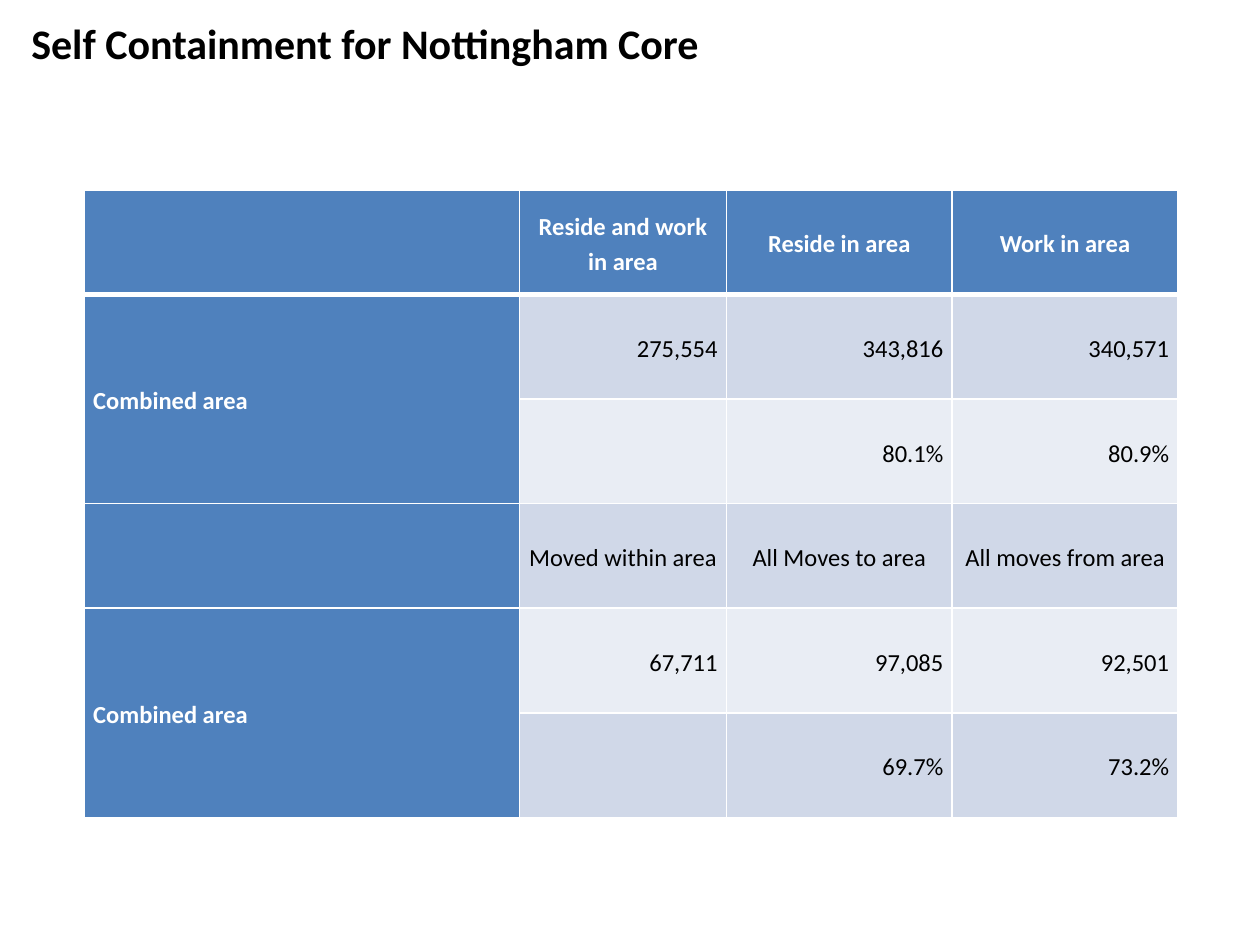
from dataclasses import dataclass

from lxml import etree
from pptx import Presentation
from pptx.dml.color import RGBColor
from pptx.enum.text import MSO_ANCHOR, PP_ALIGN
from pptx.oxml.ns import qn
from pptx.util import Inches, Pt

LEFT, CENTER, RIGHT = PP_ALIGN.LEFT, PP_ALIGN.CENTER, PP_ALIGN.RIGHT
MIDDLE = MSO_ANCHOR.MIDDLE
BLANK_LAYOUT = 6
POINT = Pt(1)


@dataclass(frozen=True)
class Theme:
    font: str = "Calibri"
    title_size: int = 24
    table_size: int = 14
    text: str = "000000"
    light_text: str = "FFFFFF"
    heading: str = "4F81BD"
    bands: tuple = ("E9EDF4", "D0D8E8")
    border: str = "FFFFFF"
    border_width: int = 1
    header_rule: int = 3


def apply(target, values):
    for name, value in values.items():
        setattr(target, name, value)


class SlideBuilder:
    def __init__(self, presentation, theme):
        self.theme = theme
        self.width = presentation.slide_width
        self.height = presentation.slide_height
        layout = presentation.slide_layouts[BLANK_LAYOUT]
        self.slide = presentation.slides.add_slide(layout)

    def area(self, left, top, width, height):
        """Turn shares of the slide's size into lengths."""
        return (int(left * self.width), int(top * self.height),
                int(width * self.width), int(height * self.height))

    def add_text(self, paragraph, text, size, color, bold, alignment):
        run = paragraph.add_run()
        run.text = text
        paragraph.alignment = alignment
        apply(run.font, {"name": self.theme.font, "size": Pt(size), "bold": bold})
        run.font.color.rgb = RGBColor.from_string(color)

    def title(self, text, *shares):
        frame = self.slide.shapes.add_textbox(*self.area(*shares)).text_frame
        apply(frame, {"word_wrap": True, "vertical_anchor": MIDDLE})
        self.add_text(frame.paragraphs[0], text, self.theme.title_size,
                      self.theme.text, True, LEFT)

    def borders(self, cell, widths):
        properties = cell._tc.get_or_add_tcPr()
        for side, width in widths.items():
            line = etree.SubElement(properties, qn(f"a:ln{side}"), w=str(width * POINT))
            fill = etree.SubElement(line, qn("a:solidFill"))
            etree.SubElement(fill, qn("a:srgbClr"), val=self.theme.border)

    def cell(self, cell, text, row, column, alignment):
        theme = self.theme
        heading = row == 0 or column == 0
        apply(cell, {"vertical_anchor": MIDDLE,
                     "margin_left": Inches(0.07), "margin_right": Inches(0.07),
                     "margin_top": 0, "margin_bottom": 0})
        widths = dict.fromkeys("LRTB", theme.border_width)
        if row < 2:
            widths["T" if row else "B"] = theme.header_rule
        self.borders(cell, widths)
        cell.fill.solid()
        color = theme.heading if heading else theme.bands[row % 2]
        cell.fill.fore_color.rgb = RGBColor.from_string(color)
        if text:
            paragraph = cell.text_frame.paragraphs[0]
            paragraph.line_spacing = 1.15
            self.add_text(paragraph, text, theme.table_size,
                          theme.light_text if heading else theme.text,
                          heading, alignment)

    def table(self, rows, column_weights, label_spans, *shares):
        """Rows are (alignment, texts); label_spans are rows whose label covers two rows."""
        left, top, width, height = self.area(*shares)
        table = self.slide.shapes.add_table(
            len(rows), len(column_weights), left, top, width, height).table
        for column, weight in zip(table.columns, column_weights):
            column.width = int(width * weight / sum(column_weights))
        for row, (alignment, texts) in enumerate(rows):
            for column, text in enumerate(texts):
                self.cell(table.cell(row, column), text, row, column,
                          alignment if column else LEFT)
        for row in label_spans:
            table.cell(row, 0).merge(table.cell(row + 1, 0))


def main():
    presentation = Presentation()
    apply(presentation, {"slide_width": Inches(10), "slide_height": Inches(7.5)})
    builder = SlideBuilder(presentation, Theme())
    builder.title("Self Containment for Nottingham Core", 0.015, 0, 0.87, 0.09)
    rows = [
        (CENTER, ["", "Reside and work in area", "Reside in area", "Work in area"]),
        (RIGHT, ["Combined area", "275,554", "343,816", "340,571"]),
        (RIGHT, ["", "", "80.1%", "80.9%"]),
        (CENTER, ["", "Moved within area", "All Moves to area", "All moves from area"]),
        (RIGHT, ["Combined area", "67,711", "97,085", "92,501"]),
        (RIGHT, ["", "", "69.7%", "73.2%"]),
    ]
    builder.table(rows, (3.45, 1.64, 1.79, 1.79), (1, 4), 0.067, 0.201, 0.868, 0.664)
    presentation.save("out.pptx")


if __name__ == "__main__":
    main()
